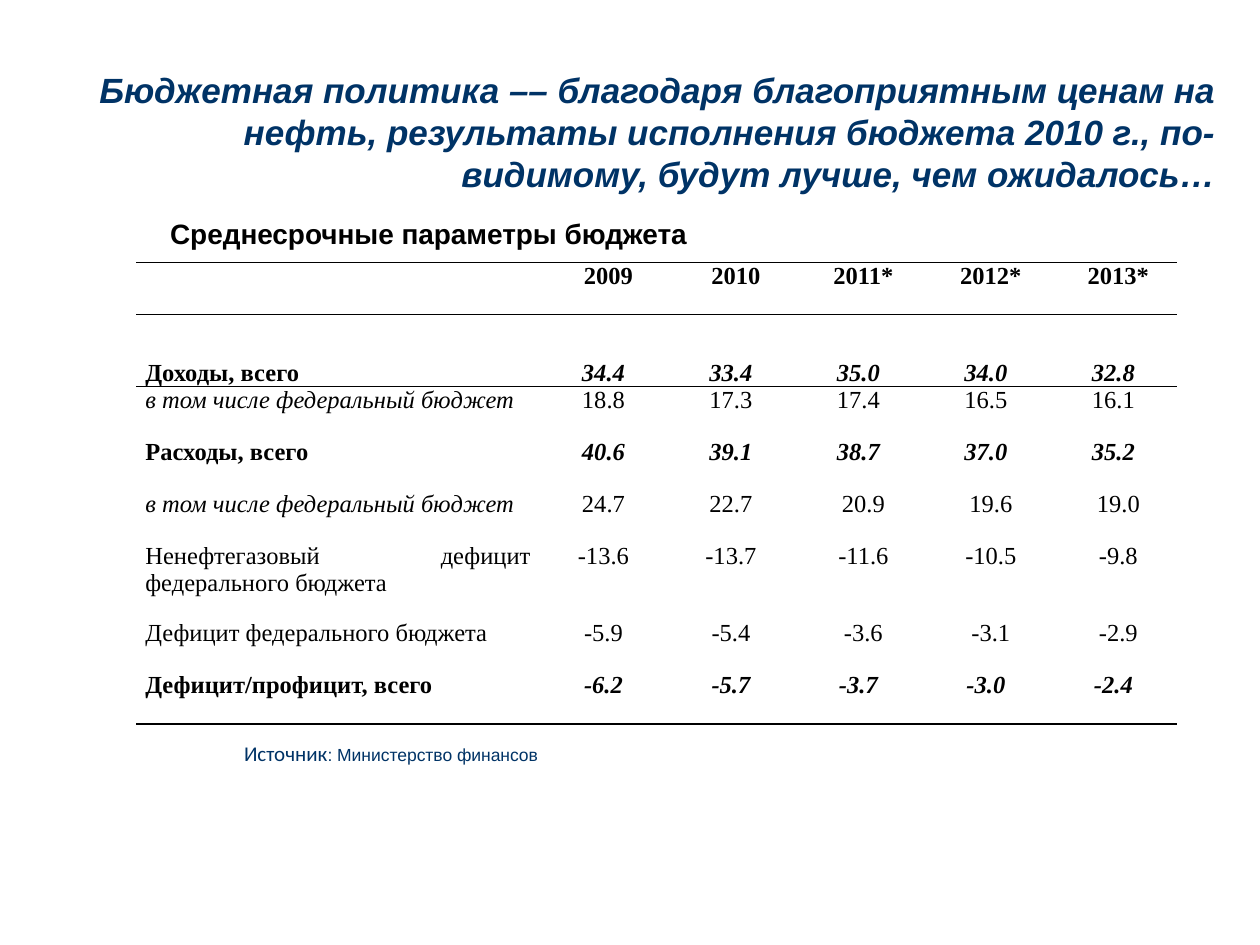
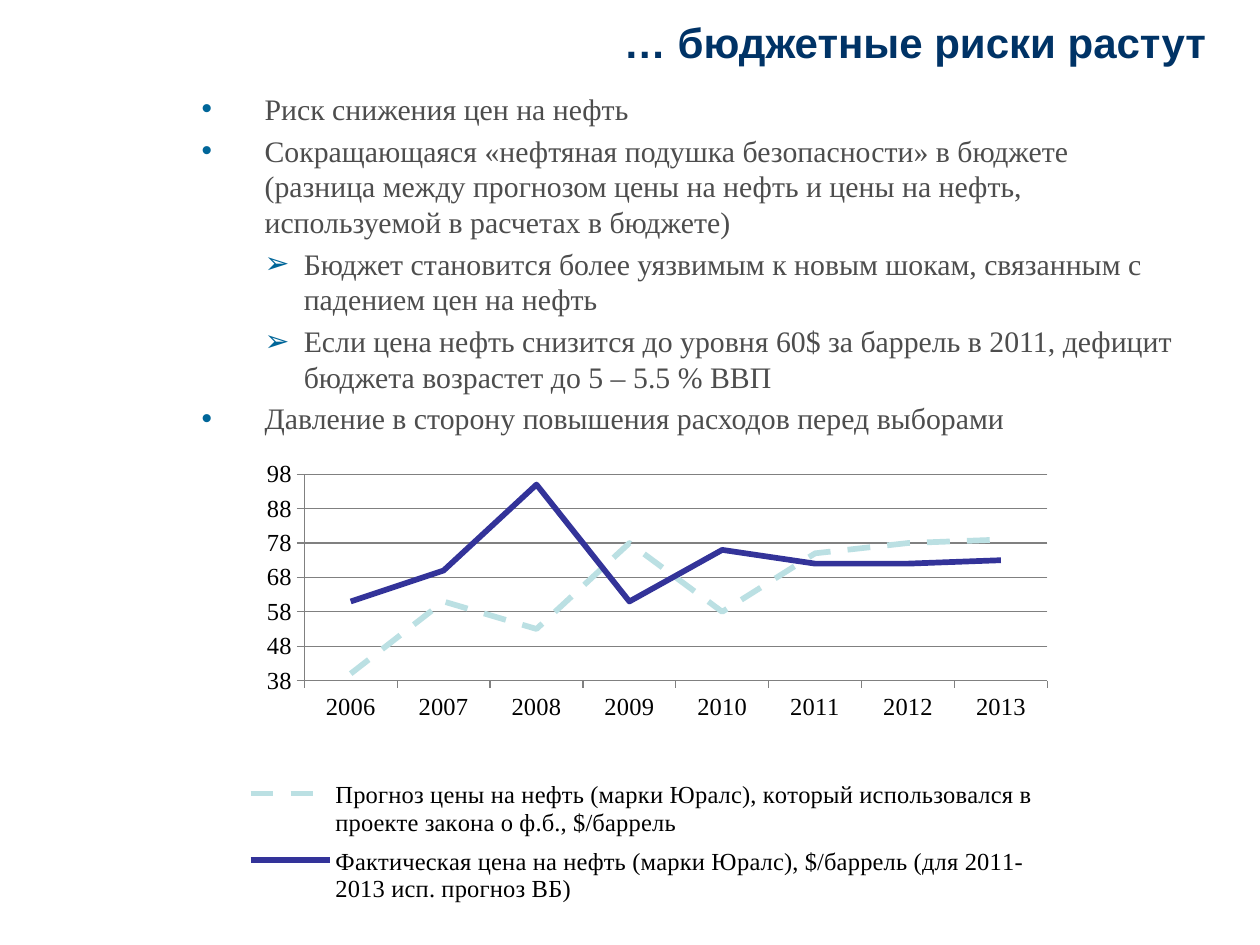
"""Build two slides on budget policy: a table of budget parameters and a chart of oil prices."""
import lxml.etree
import pptx
import pptx.chart.data
import pptx.dml.color
import pptx.enum.chart
import pptx.enum.dml
import pptx.enum.text
import pptx.oxml.ns
import pptx.util

Cm = pptx.util.Cm
Pt = pptx.util.Pt
RGB = pptx.dml.color.RGBColor.from_string
ALIGN = pptx.enum.text.PP_ALIGN
ANCHOR = pptx.enum.text.MSO_ANCHOR
qn = pptx.oxml.ns.qn

THEME = {
    "navy": "003366", "black": "000000", "gray": "4D4D4D", "bullet": "006699",
    "grid": "808080", "forecast": "BBE0E3", "actual": "333399",
    "sans": "Arial", "source": "Calibri", "serif": "Times New Roman",
    "title1": 20, "title2": 24, "heading": 16, "body": 17, "data": 14,
    "source_label": 12, "source_text": 10,
}


def write(p, text, face, size, color, **extra):
    r = p.add_run()
    r.text = text
    fmt = {"name": THEME[face], "size": Pt(THEME[size]), "bold": False, "italic": False, **extra}
    for key, value in fmt.items():
        setattr(r.font, key, value)
    r.font.color.rgb = RGB(THEME[color])


def place(sp, box, anchor):
    for key, value in zip(("left", "top", "width", "height"), box):
        setattr(sp, key, Cm(value))
    tf = sp.text_frame
    fmt = {"word_wrap": True, "auto_size": pptx.enum.text.MSO_AUTO_SIZE.NONE, "vertical_anchor": anchor}
    for key, value in fmt.items():
        setattr(tf, key, value)
    return tf


prs = pptx.Presentation()
prs.slide_width, prs.slide_height = Cm(25.4), Cm(19.05)

titles = [
    (5, "Бюджетная политика –– благодаря благоприятным ценам на нефть, результаты исполнения "
        "бюджета 2010 г., по-видимому, будут лучше, чем ожидалось…",
     (1.47, 1.07, 23.29, 2.97), "title1", True),
    (1, "… бюджетные риски растут", (11.23, 0, 13.34, 1.47), "title2", False),
]
slides = []
for layout, text, box, size, italic in titles:
    s = prs.slides.add_slide(prs.slide_layouts[layout])
    p = place(s.shapes.title, box, ANCHOR.BOTTOM).paragraphs[0]
    p.alignment = ALIGN.RIGHT
    write(p, text, "sans", size, "navy", bold=True, italic=italic)
    slides.append(s)
budget, risks = slides

captions = [
    ((3.18, 4.24, 12.7, 0.94), [("Среднесрочные параметры бюджета", "sans", "heading", "black", True)]),
    ((4.67, 14.81, 8, 0.76), [("Источник", "source", "source_label", "navy", False),
                              (": Министерство финансов", "sans", "source_text", "navy", False)]),
]
for box, runs in captions:
    sp = budget.shapes.add_textbox(0, 0, 0, 0)
    p = place(sp, box, ANCHOR.MIDDLE).paragraphs[0]
    for text, face, size, color, bold in runs:
        write(p, text, face, size, color, bold=bold)

LABEL, TOTAL, SUB, PLAIN = "header", "total", "sub", "plain"
rows = [
    (LABEL, 1.05, "", "2009 2010 2011* 2012* 2013*"),
    (TOTAL, 1.45, "Доходы, всего", "34.4 33.4 35.0 34.0 32.8"),
    (SUB, 1.05, "в том числе федеральный бюджет", "18.8 17.3 17.4 16.5 16.1"),
    (TOTAL, 1.05, "Расходы, всего", "40.6 39.1 38.7 37.0 35.2"),
    (SUB, 1.05, "в том числе федеральный бюджет", "24.7 22.7 20.9 19.6 19.0"),
    (PLAIN, 1.05, "Ненефтегазовый дефицит федерального бюджета", "-13.6 -13.7 -11.6 -10.5 -9.8"),
    (PLAIN, 1.05 + 0.5, "Дефицит федерального бюджета", "-5.9 -5.4 -3.6 -3.1 -2.9"),
    (TOTAL, 1.05, "Дефицит/профицит, всего", "-6.2 -5.7 -3.7 -3.0 -2.4"),
]
heights = [1.05, 1.45, 1.05, 1.05, 1.05, 1.55, 1.05, 1.05]
borders = {0: ("lnT", "lnB"), 1: ("lnT",), len(rows) - 1: ("lnB",)}
frame = budget.shapes.add_table(len(rows), 6, Cm(2.75), Cm(5.29), Cm(20.98), Cm(sum(heights)))
table = frame.table
table.first_row = table.horz_banding = False
table._tbl.tblPr.find(qn("a:tableStyleId")).text = "{2D5ABB26-0587-4C30-8999-92F81FD0307C}"
for col, width in zip(table.columns, [8.13] + [2.57] * 5):
    col.width = Cm(width)
for i, (kind, _, label, values) in enumerate(rows):
    table.rows[i].height = Cm(heights[i])
    for j, text in enumerate([label] + values.split()):
        cell = table.cell(i, j)
        fmt = {"margin_left": Cm(0.18), "margin_right": Cm(0.18), "margin_top": 0, "margin_bottom": 0,
               "vertical_anchor": ANCHOR.BOTTOM if i == 1 else ANCHOR.TOP}
        for key, value in fmt.items():
            setattr(cell, key, value)
        cell.fill.background()
        for k, side in enumerate(borders.get(i, ())):
            ln = lxml.etree.Element(qn("a:" + side), w=str(Pt(1)))
            fill = lxml.etree.SubElement(ln, qn("a:solidFill"))
            lxml.etree.SubElement(fill, qn("a:srgbClr"), val=THEME["black"])
            cell._tc.tcPr.insert(k, ln)
        if not text:
            continue
        p = cell.text_frame.paragraphs[0]
        p.alignment = ALIGN.CENTER if j else ALIGN.JUSTIFY
        if j and (kind == LABEL or i in (4, 5, 6) and j > 2):
            p._p.get_or_add_pPr().set("marL", str(Cm(0.2)))
        write(p, text, "serif", "data", "black", bold=kind in (LABEL, TOTAL),
              italic=kind == TOTAL and j > 0 or kind == SUB and j == 0)

bullets = [
    (0, "Риск снижения цен на нефть"),
    (0, "Сокращающаяся «нефтяная подушка безопасности» в бюджете (разница между прогнозом цены "
        "на нефть и цены на нефть, используемой в расчетах в бюджете)"),
    (1, "Бюджет становится более уязвимым к новым шокам, связанным с падением цен на нефть"),
    (1, "Если цена нефть снизится до уровня 60$ за баррель в 2011, дефицит бюджета возрастет "
        "до 5 – 5.5 % ВВП"),
    (0, "Давление в сторону повышения расходов перед выборами"),
]
levels = [("•", 1.27, -1.27), ("➢", 2.06, -0.79)]
tf = place(risks.placeholders[1], (3.81, 1.7, 20.32, 7.37), ANCHOR.TOP)
for i, (level, text) in enumerate(bullets):
    p = tf.add_paragraph() if i else tf.paragraphs[0]
    p.level = level
    p.space_before = Pt(3.4 if i else 0)
    char, margin, indent = levels[level]
    pPr = p._p.get_or_add_pPr()
    pPr.set("marL", str(Cm(margin)))
    pPr.set("indent", str(Cm(indent)))
    color = lxml.etree.SubElement(pPr, qn("a:buClr"))
    lxml.etree.SubElement(color, qn("a:srgbClr"), val=THEME["bullet"])
    lxml.etree.SubElement(pPr, qn("a:buChar"), char=char)
    write(p, text, "serif", "body", "gray")

data = pptx.chart.data.CategoryChartData()
data.categories = [str(year) for year in range(2006, 2014)]
data.add_series("Прогноз цены на нефть (марки Юралс), который использовался в проекте закона о ф.б., $/баррель",
                (40, 61, 53, 78, 58, 75, 78, 79))
data.add_series("Фактическая цена на нефть (марки Юралс), $/баррель (для 2011-2013 исп. прогноз ВБ)",
                (61, 70, 95, 61, 76, 72, 72, 73))
chart = risks.shapes.add_chart(pptx.enum.chart.XL_CHART_TYPE.LINE,
                               Cm(4.24), Cm(9.09), Cm(17.22), Cm(9.45), data).chart
chart.has_title = False
chart.font.name = THEME["serif"]
chart.font.size = Pt(THEME["data"])
chart.font.color.rgb = RGB(THEME["black"])
chart.plots[0].vary_by_categories = False
for series, color in zip(chart.plots[0].series, ("forecast", "actual")):
    series.smooth = False
    series.format.line.width = Pt(3.25)
    series.format.line.color.rgb = RGB(THEME[color])
chart.plots[0].series[0].format.line.dash_style = pptx.enum.dml.MSO_LINE.DASH

axis = chart.value_axis
for key, value in {"minimum_scale": 38, "maximum_scale": 98, "major_unit": 10, "has_major_gridlines": True}.items():
    setattr(axis, key, value)
for line in (axis.format.line, axis.major_gridlines.format.line, chart.category_axis.format.line):
    line.color.rgb = RGB(THEME["grid"])
    line.width = Pt(0.75)
for ax in (axis, chart.category_axis):
    ax.major_tick_mark = pptx.enum.chart.XL_TICK_MARK.OUTSIDE

chart.has_legend = True
chart.legend.position = pptx.enum.chart.XL_LEGEND_POSITION.BOTTOM
chart.legend.include_in_layout = False
chart.legend.font.size = Pt(THEME["data"])
plot = chart._chartSpace.chart.plotArea
layouts = [(plot, 0, "inner", (0.11, 0.05, 0.87, 0.44)),
           (chart.legend._element, 1, None, (0.04, 0.68, 0.93, 0.31))]
for parent, index, target, box in layouts:
    for old in parent.findall(qn("c:layout")):
        parent.remove(old)
    layout = lxml.etree.Element(qn("c:layout"))
    manual = lxml.etree.SubElement(layout, qn("c:manualLayout"))
    settings = [("layoutTarget", target)] if target else []
    settings += [("xMode", "edge"), ("yMode", "edge"), *zip("xywh", box)]
    for tag, value in settings:
        lxml.etree.SubElement(manual, qn("c:" + tag), val=str(value))
    parent.insert(index, layout)

prs.save("out.pptx")
